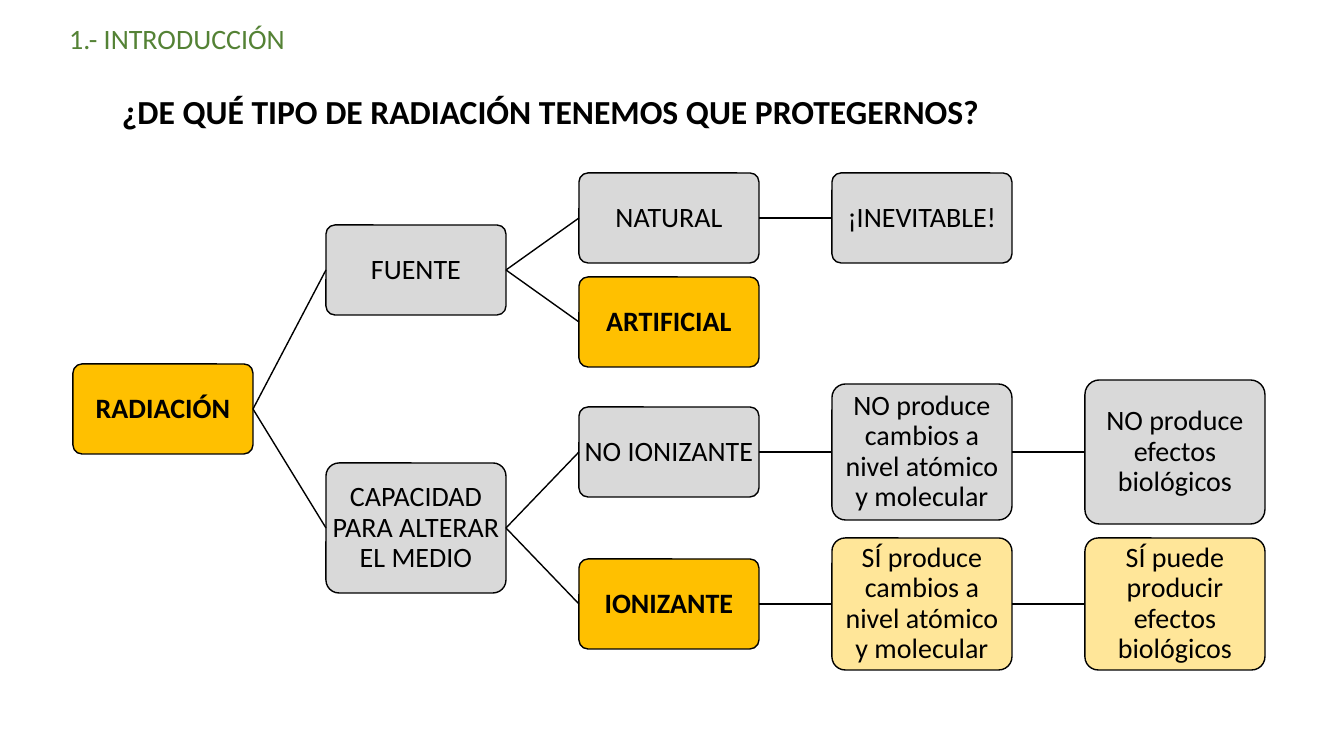
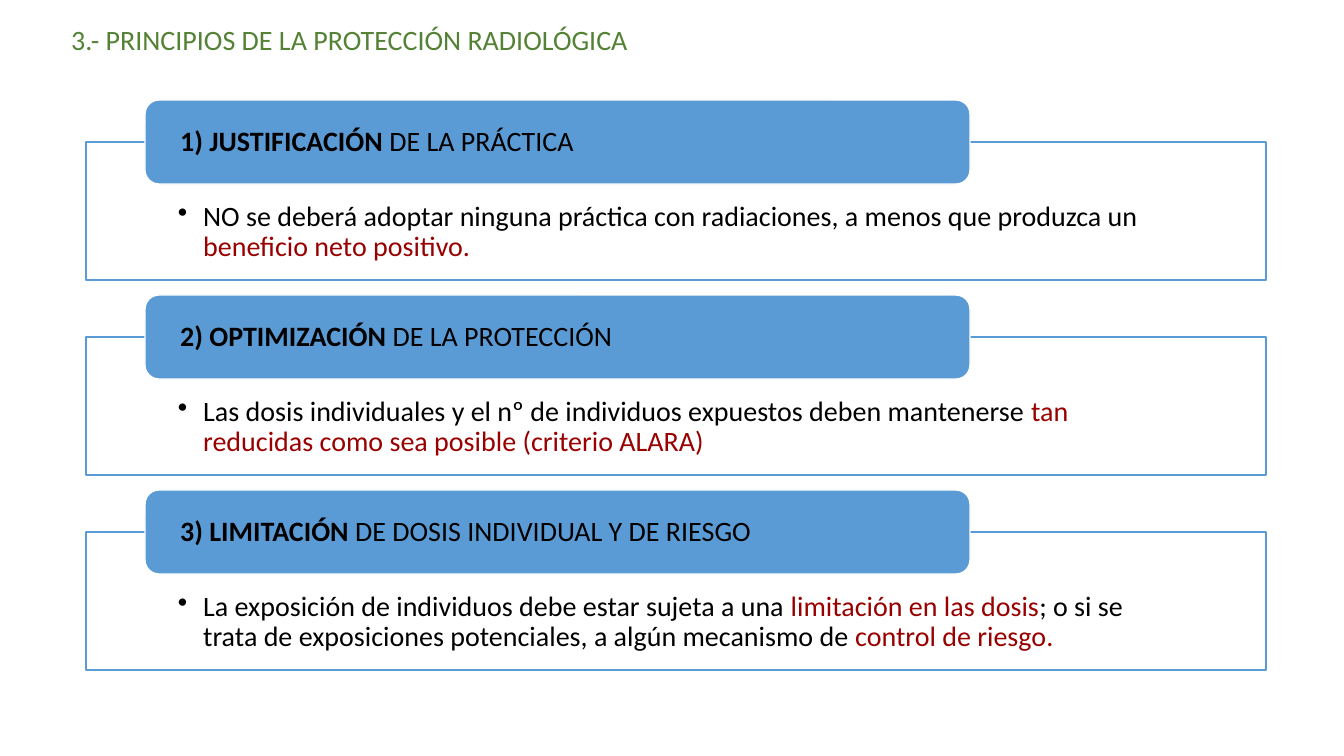
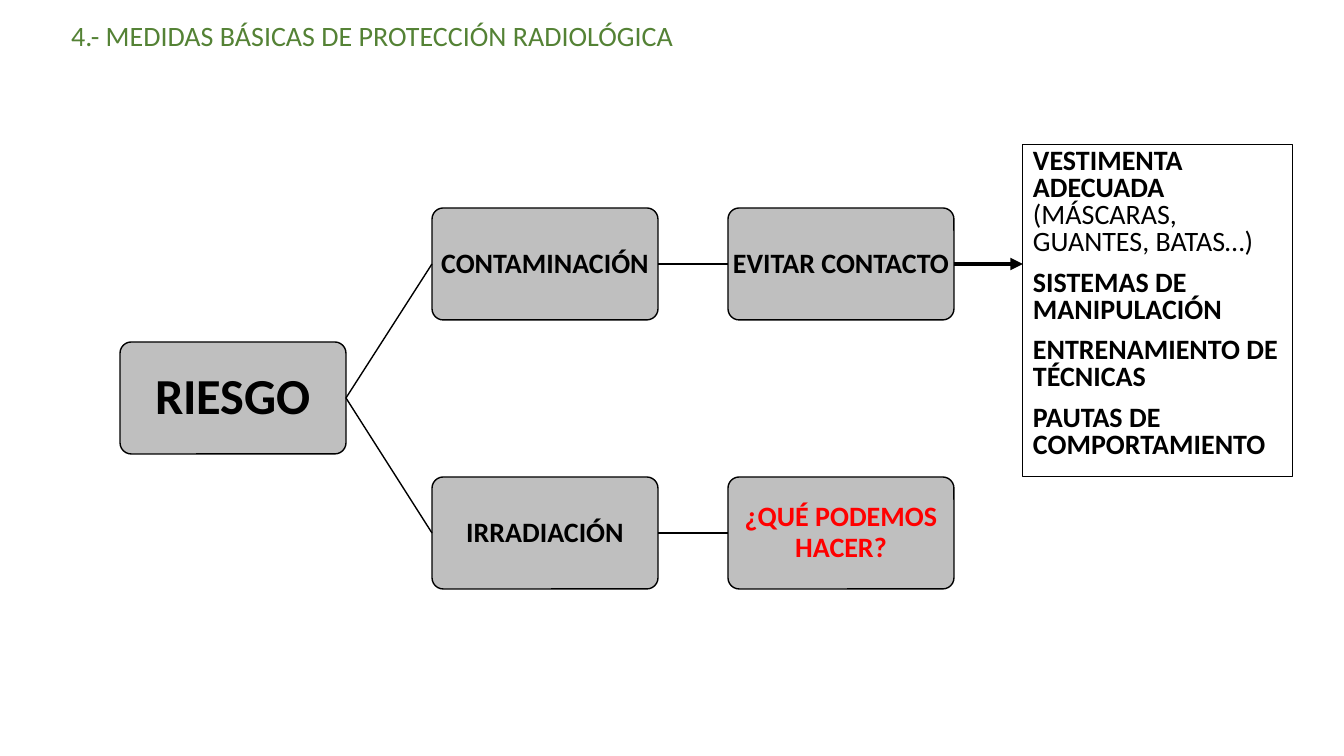
from lxml import etree
from pptx import Presentation
from pptx.dml.color import RGBColor
from pptx.enum.shapes import MSO_CONNECTOR as CONNECTOR, MSO_SHAPE as SHAPE
from pptx.enum.text import MSO_ANCHOR as ANCHOR, MSO_AUTO_SIZE as AUTO_SIZE, PP_ALIGN as ALIGN
from pptx.oxml.ns import qn
from pptx.util import Emu, Pt

PX = 914400 / 100.8
FONT = "Calibri"
COLORS = {
    "title": "548235", "text": "000000", "accent": "990000", "question": "FF0000",
    "amber": "FFC000", "sand": "FFE699", "light": "D9D9D9", "grey": "BFBFBF",
    "blue": "5B9BD5", "white": "FFFFFF",
}
RGB = {name: RGBColor.from_string(value) for name, value in COLORS.items()}


def add_box(slide, kind, area, fill, outline, paragraphs, insets, size=20, spacing=0.9):
    """Draw an outlined box; each paragraph is a list of (text, colour, bold) runs."""
    box = slide.shapes.add_shape(kind, *[Emu(round(v * PX)) for v in area])
    box.shadow.inherit = False
    box.fill.solid()
    box.fill.fore_color.rgb = RGB[fill]
    box.line.color.rgb = RGB[outline]
    box.line.width = Pt(1)
    frame = box.text_frame
    frame.word_wrap = True
    frame.margin_left = frame.margin_right = Emu(round(insets[0] * PX))
    frame.margin_top = frame.margin_bottom = Emu(round(insets[1] * PX))
    for i, runs in enumerate(paragraphs):
        paragraph = frame.paragraphs[0] if i == 0 else frame.add_paragraph()
        paragraph.alignment = ALIGN.LEFT
        paragraph.line_spacing = spacing
        paragraph.font.name = FONT
        paragraph.font.size = Pt(size)
        for text, color, bold in runs:
            run = paragraph.add_run()
            run.text = text
            run.font.color.rgb = RGB[color]
            run.font.bold = bold
    return box


def add_link(slide, start, width=1):
    """Add a straight black line from the right side of the box start."""
    right, middle = start.left + start.width, start.top + start.height // 2
    link = slide.shapes.add_connector(CONNECTOR.STRAIGHT, right, middle, right, middle)
    link.begin_connect(start, 3)
    link.line.color.rgb = RGB["text"]
    link.line.width = Pt(width)
    etree.SubElement(link._element.spPr, qn("a:effectLst"))
    return link


prs = Presentation()
prs.slide_width, prs.slide_height = Emu(round(1344 * PX)), Emu(round(756 * PX))

# Titles
TITLES = [
    ("1.- INTRODUCCIÓN", 59, 10, 1159),
    ("3.- PRINCIPIOS DE LA PROTECCIÓN RADIOLÓGICA", 61, 11, 1191),
    ("4.- MEDIDAS BÁSICAS DE PROTECCIÓN RADIOLÓGICA", 61, 7, 1191),
]
slides = []
for text, left, top, width in TITLES:
    slide = prs.slides.add_slide(prs.slide_layouts[5])
    title = slide.shapes.title
    title.left, title.top, title.width, title.height = [
        Emu(round(v * PX)) for v in (left, top, width, 60)]
    title.text_frame.text = text
    title.text_frame.auto_size = AUTO_SIZE.NONE
    title.text_frame.vertical_anchor = ANCHOR.MIDDLE
    heading = title.text_frame.paragraphs[0]
    heading.alignment = ALIGN.LEFT
    heading.line_spacing = 0.9
    heading.font.name = FONT
    heading.font.size = Pt(20)
    heading.font.color.rgb = RGB["title"]
    slides.append(slide)
intro, principles, measures = slides

# Question under the first title
question = intro.shapes.add_textbox(*[Emu(round(v * PX)) for v in (112, 86, 1141, 50)])
question.text_frame.word_wrap = True
question.text_frame.text = "¿DE QUÉ TIPO DE RADIACIÓN TENEMOS QUE PROTEGERNOS?"
asking = question.text_frame.paragraphs[0]
asking.font.name = FONT
asking.font.size = Pt(24)
asking.font.bold = True
asking.font.color.rgb = RGB["text"]

# Trees: key, parent, column, middle, height, fill, colour, bold, size, text
RADIATION = [
    ("radiation", None, 0, 409, 90, "amber", "text", True, 20, "RADIACIÓN"),
    ("source", "radiation", 1, 270, 90, "light", "text", False, 20, "FUENTE"),
    ("natural", "source", 2, 218, 90, "light", "text", False, 20, "NATURAL"),
    ("inevitable", "natural", 3, 218, 90, "light", "text", False, 20, "¡INEVITABLE!"),
    ("artificial", "source", 2, 322, 90, "amber", "text", True, 20, "ARTIFICIAL"),
    ("capacity", "radiation", 1, 528, 130, "light", "text", False, 20,
     "CAPACIDAD PARA ALTERAR EL MEDIO"),
    ("non-ionizing", "capacity", 2, 452, 90, "light", "text", False, 20, "NO IONIZANTE"),
    ("no change", "non-ionizing", 3, 452, 136, "light", "text", False, 20,
     "NO produce cambios a nivel atómico y molecular"),
    ("no effect", "no change", 4, 452, 144, "light", "text", False, 20,
     "NO produce efectos biológicos"),
    ("ionizing", "capacity", 2, 604, 90, "amber", "text", True, 20, "IONIZANTE"),
    ("change", "ionizing", 3, 604, 132, "sand", "text", False, 20,
     "SÍ produce cambios a nivel atómico y molecular"),
    ("effect", "change", 4, 604, 132, "sand", "text", False, 20,
     "SÍ puede producir efectos biológicos"),
]
RISK = [
    ("risk", None, 0, 398, 112, "grey", "text", True, 36, "RIESGO"),
    ("contamination", "risk", 1, 264, 112, "grey", "text", True, 20, "CONTAMINACIÓN"),
    ("avoid", "contamination", 2, 264, 112, "grey", "text", True, 20, "EVITAR CONTACTO"),
    ("irradiation", "risk", 1, 533, 112, "grey", "text", True, 20, "IRRADIACIÓN"),
    ("what to do", "irradiation", 2, 533, 112, "grey", "question", True, 20,
     "¿QUÉ PODEMOS HACER?"),
]
TREES = [
    (intro, [73 + 253 * i for i in range(5)], 180, RADIATION),
    (measures, [120, 432, 728], 226, RISK),
]
nodes = {}
for slide, columns, width, tree in TREES:
    for key, parent, column, middle, height, fill, color, bold, size, text in tree:
        node = add_box(slide, SHAPE.ROUNDED_RECTANGLE,
                       (columns[column], middle - height // 2, width, height),
                       fill, "text", [[(text, color, bold)]], (1, 1), size)
        node.adjustments[0] = 0.1
        node.text_frame.vertical_anchor = ANCHOR.MIDDLE
        node.text_frame.paragraphs[0].alignment = ALIGN.CENTER
        nodes[key] = node
        if parent:
            add_link(slide, nodes[parent]).end_connect(node, 1)

# Principles: a bulleted frame with a heading over its top edge
PRINCIPLES = [
    ("1) JUSTIFICACIÓN ", "DE LA PRÁCTICA", [
        ("NO se deberá adoptar ninguna práctica con radiaciones, a menos que produzca un ",
         "text", False),
        ("beneficio neto positivo.", "accent", False)]),
    ("2) OPTIMIZACIÓN ", "DE LA PROTECCIÓN", [
        ("Las dosis individuales y el nº de individuos expuestos deben mantenerse ",
         "text", False),
        ("tan reducidas como sea posible (criterio ALARA)", "accent", False)]),
    ("3) LIMITACIÓN", " DE DOSIS INDIVIDUAL Y DE RIESGO", [
        ("La exposición de individuos debe estar sujeta a una ", "text", False),
        ("limitación en las dosis", "accent", False),
        ("; o si se trata de exposiciones potenciales, a algún mecanismo de ", "text", False),
        ("control de riesgo.", "accent", False)]),
]
for i, (name, scope, rule) in enumerate(PRINCIPLES):
    top = 100 + 195 * i
    detail = add_box(principles, SHAPE.RECTANGLE, (86, top + 42, 1180, 138),
                     "white", "blue", [rule], (92, 60))
    detail.text_frame.vertical_anchor = ANCHOR.TOP
    detail.text_frame.margin_bottom = Emu(round(16 * PX))
    bulleted = detail.text_frame.paragraphs[0]._p.get_or_add_pPr()
    bulleted.set("marL", "228600")
    bulleted.set("indent", "-228600")
    bullet = etree.Element(qn("a:buChar"), char="•")
    bulleted.find(qn("a:defRPr")).addprevious(bullet)
    header = add_box(principles, SHAPE.ROUNDED_RECTANGLE, (145, top, 825, 84), "blue", "white",
                     [[(name, "text", True), (scope, "text", False)]], (31, 0))
    header.text_frame.vertical_anchor = ANCHOR.MIDDLE

# Ways to avoid contact
WAYS = [
    [("VESTIMENTA ADECUADA ", "text", True), ("(MÁSCARAS, GUANTES, BATAS…)", "text", False)],
    [("SISTEMAS DE MANIPULACIÓN", "text", True)],
    [("ENTRENAMIENTO DE TÉCNICAS", "text", True)],
    [("PAUTAS DE COMPORTAMIENTO", "text", True)],
]
ways = add_box(measures, SHAPE.RECTANGLE, (1023, 144, 270, 333), "white", "text",
               WAYS, (10, 5), spacing=0.8)
ways.line.width = Pt(0.75)
ways.text_frame.vertical_anchor = ANCHOR.TOP
for way in ways.text_frame.paragraphs[1:]:
    way.space_before = Pt(10)

arrow = add_link(measures, nodes["avoid"], 3)
arrow.end_x = ways.left
etree.SubElement(arrow.line._get_or_add_ln(), qn("a:tailEnd"), type="triangle")

prs.save("out.pptx")
